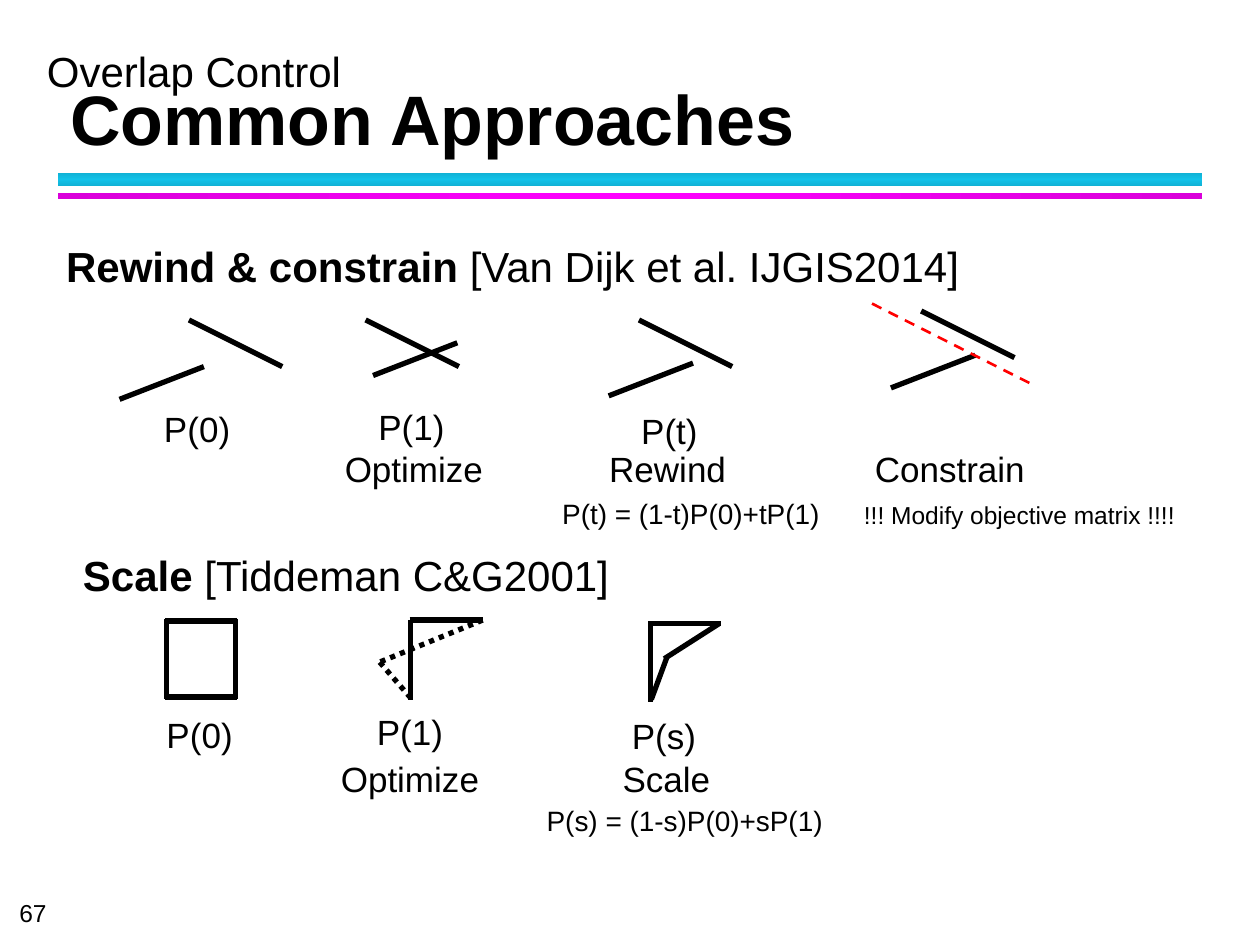
from copy import deepcopy
from dataclasses import dataclass

from lxml import etree
from pptx import Presentation
from pptx import util as u
from pptx.dml.color import RGBColor
from pptx.enum import dml, shapes, text
from pptx.oxml.ns import qn


@dataclass(frozen=True)
class Theme:
    font: str = "Arial"
    ink: RGBColor = RGBColor(0, 0, 0)
    alert: RGBColor = RGBColor(0xFF, 0, 0)
    cyan: tuple = ("10B0D3", "12C2E9", "10B0D3")
    magenta: tuple = ("DA00DA", "FF00FF", "DA00DA")
    title: int = 40
    heading: int = 24
    label: int = 20
    formula: int = 16
    small: int = 14
    stroke: float = 3
    guide: float = 1.5


THEME = Theme()
BOX_HEIGHT = {THEME.heading: 1.27, THEME.label: 1.12,
              THEME.formula: 0.94, THEME.small: 0.86}

# All positions are in centimetres
RISING = (1.7, -0.66)
FALLING = (1.88, 0.94)
RISING_STARTS = [(2.41, 8.05), (7.52, 7.57), (12.27, 7.98), (17.96, 7.82)]
FALLING_STARTS = [(3.81, 6.45), (7.37, 6.45), (12.88, 6.45), (18.57, 6.27)]

SOLID_EDGES = [
    # Square P(0)
    (3.33, 14.05, 4.78, 14.05), (3.33, 12.52, 4.78, 12.52),
    (3.35, 12.47, 3.35, 14.1), (4.75, 12.47, 4.75, 14.1),
    # Overlapping P(1)
    (8.28, 12.5, 8.28, 14.12), (8.26, 12.5, 9.73, 12.5),
    # Scaled P(s)
    (13.13, 14.1, 13.44, 13.26), (13.11, 12.52, 13.11, 14.15),
    (14.5, 12.57, 13.39, 13.28), (13.08, 12.57, 14.53, 12.57),
]
DOTTED_EDGES = [(8.28, 14.07, 7.62, 13.31), (9.73, 12.5, 7.62, 13.36)]

# Text, left, top, width, size
CAPTIONS = [
    ("P(0)", 3.05, 8.1, 1.85, THEME.label),
    ("P(1)", 7.37, 8.05, 1.85, THEME.label),
    ("P(t)", 12.67, 8.13, 1.65, THEME.label),
    ("Optimize", 6.68, 8.89, 3.33, THEME.label),
    ("Rewind", 12.01, 8.89, 2.9, THEME.label),
    ("Constrain", 17.37, 8.89, 3.56, THEME.label),
    ("P(t) = (1-t)P(0)+tP(1)", 10.97, 9.88, 5.92, THEME.formula),
    ("!!! Modify objective matrix !!!!", 17.15, 9.96, 6.81, THEME.small),
    ("P(0)", 3.1, 14.25, 1.85, THEME.label),
    ("P(1)", 7.34, 14.2, 1.85, THEME.label),
    ("P(s)", 12.47, 14.27, 1.83, THEME.label),
    ("Optimize", 6.6, 15.14, 3.33, THEME.label),
    ("Scale", 12.29, 15.14, 2.29, THEME.label),
    ("P(s) = (1-s)P(0)+sP(1)", 10.72, 16.08, 6.17, THEME.formula),
    ("Overlap Control", 0.66, 0.79, 6.5, THEME.heading),
]


def add_text(page, spans, left, top, width, height, size):
    """Add a text box; spans are (wording, bold) pairs."""
    box = page.shapes.add_textbox(u.Cm(left), u.Cm(top), u.Cm(width), u.Cm(height))
    para = box.text_frame.paragraphs[0]
    para.font.name = THEME.font
    para.font.size = u.Pt(size)
    para.font.color.rgb = THEME.ink
    for wording, bold in spans:
        span = para.add_run()
        span.text = wording
        span.font.bold = bold
    return box.text_frame


def add_caption(page, spans, left, top, width, size):
    frame = add_text(page, spans, left, top, width, BOX_HEIGHT[size], size)
    frame.word_wrap = False
    frame.auto_size = text.MSO_AUTO_SIZE.SHAPE_TO_FIT_TEXT
    frame.paragraphs[0].alignment = text.PP_ALIGN.CENTER


def add_line(page, x1, y1, x2, y2, color=THEME.ink, width=THEME.stroke, dash=None):
    line = page.shapes.add_connector(
        shapes.MSO_CONNECTOR.STRAIGHT, u.Cm(x1), u.Cm(y1), u.Cm(x2), u.Cm(y2))
    line.line.color.rgb = color
    line.line.width = u.Pt(width)
    if dash:
        line.line.dash_style = dash
    etree.SubElement(line._element.spPr, qn("a:effectLst"))


def add_bar(page, top, height, colors, angle):
    bar = page.shapes.add_shape(
        shapes.MSO_SHAPE.RECTANGLE, u.Cm(1.17), u.Cm(top), u.Cm(23.06), u.Cm(height))
    bar.shadow.inherit = False
    bar.line.fill.background()
    bar.fill.gradient()
    bar.fill.gradient_angle = angle
    # The default gradient has two stops; add a middle one
    stop_list = bar._element.spPr.find(".//" + qn("a:gsLst"))
    stop_list.insert(1, deepcopy(stop_list[0]))
    for stop, position, color in zip(bar.fill.gradient_stops, (0, 0.5, 1), colors):
        stop.position = position
        stop.color.rgb = RGBColor.from_string(color)


def add_frame(page):
    number = add_text(page, [("67", False)], 0.25, 18.11, 0.86, 0.58, THEME.small)
    number.margin_left = u.Cm(0.14)
    number.margin_top = number.margin_right = number.margin_bottom = 0
    number.vertical_anchor = text.MSO_ANCHOR.BOTTOM
    number.word_wrap = True

    add_bar(page, 3.48, 0.28, THEME.cyan, 90)
    add_bar(page, 3.89, 0.13, THEME.magenta, 0)

    title = add_text(page, [("Common Approaches", True)],
                     1.17, 0.84, 23.01, 2.51, THEME.title)
    title.word_wrap = True
    title.vertical_anchor = text.MSO_ANCHOR.BOTTOM
    title.paragraphs[0].line_spacing = u.Pt(36)


def add_drawings(page):
    # Segment pairs: before, optimized, rewound, constrained
    for starts, (dx, dy) in ((RISING_STARTS, RISING), (FALLING_STARTS, FALLING)):
        for x, y in starts:
            add_line(page, x, y, x + dx, y + dy)
    add_line(page, 17.58, 6.12, 20.85, 7.77, THEME.alert, THEME.guide,
             dml.MSO_LINE.DASH)

    # Outlines of the scale example
    for edge in SOLID_EDGES:
        add_line(page, *edge)
    for edge in DOTTED_EDGES:
        add_line(page, *edge, dash=dml.MSO_LINE.ROUND_DOT)


def main():
    deck = Presentation()
    deck.slide_width, deck.slide_height = u.Cm(25.4), u.Cm(19.05)
    page = deck.slides.add_slide(deck.slide_layouts[6])

    add_frame(page)
    add_drawings(page)

    # Section headings and captions
    add_caption(page, [("Rewind & constrain ", True),
                       ("[Van Dijk et al. IJGIS2014]", False)],
                0.99, 4.72, 18.69, THEME.heading)
    add_caption(page, [("Scale ", True), ("[Tiddeman C&G2001]", False)],
                1.17, 10.95, 11.61, THEME.heading)
    for wording, *place in CAPTIONS:
        add_caption(page, [(wording, False)], *place)

    deck.save("out.pptx")


if __name__ == "__main__":
    main()
